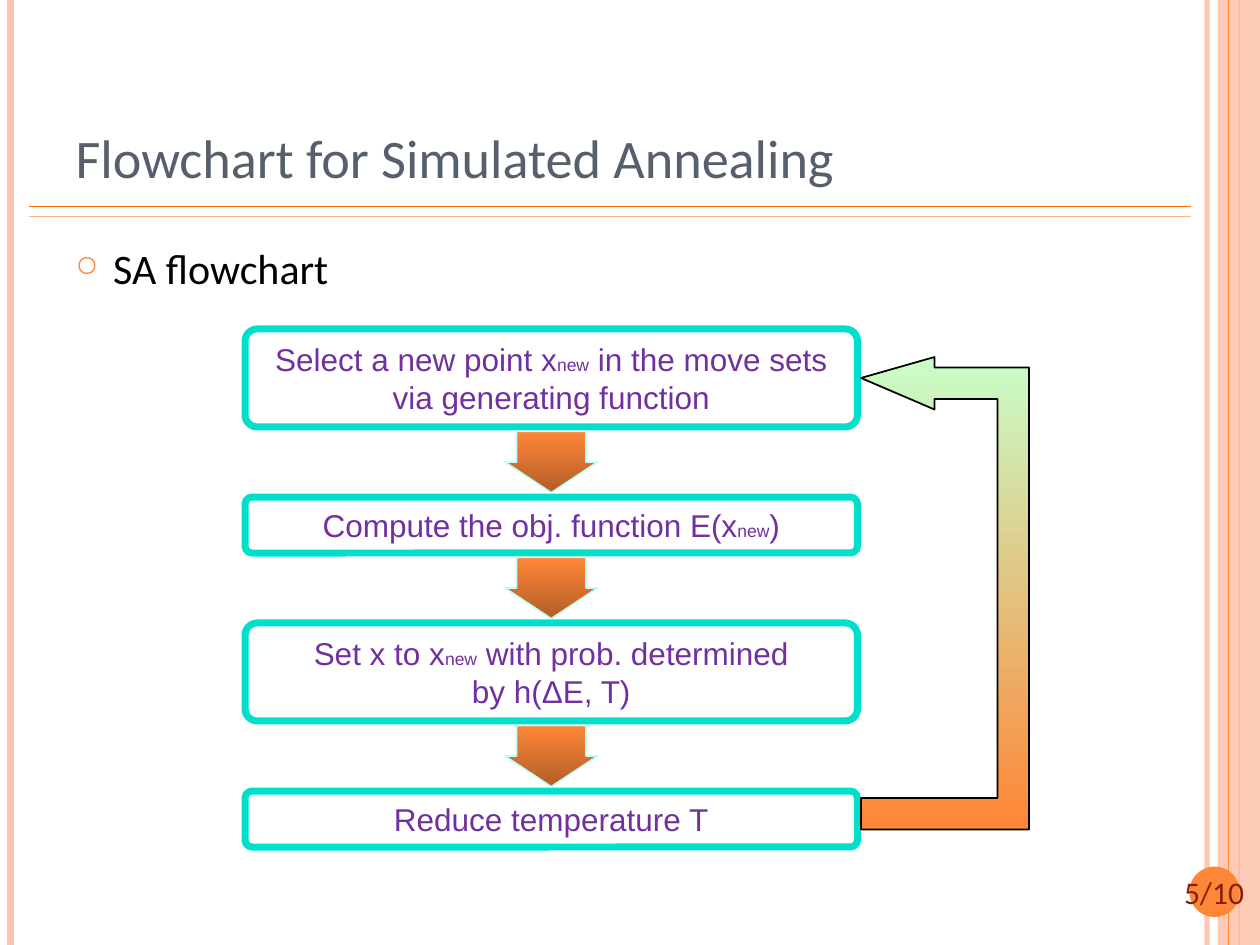
import pptx
import pptx.dml.color
import pptx.enum.shapes
import pptx.enum.text
import pptx.util
from lxml import etree
from pptx.oxml.ns import qn

Pt = pptx.util.Pt
SHAPE = pptx.enum.shapes.MSO_SHAPE
ALIGN = pptx.enum.text.PP_ALIGN
ANCHOR = pptx.enum.text.MSO_ANCHOR

# Content
TITLE = "Flowchart for Simulated Annealing"
TOPIC = "SA flowchart"
PAGE = "5/10"
NEW = ("new", 10)
# Each step: top, height, lines of (wording, size) runs
STEPS = [
    (188, 56, [[("Select a new point x", 18), NEW, (" in the move sets", 18)],
               [("via generating function", 18)]]),
    (284, 32, [[("Compute the obj. function E(x", 18), NEW, (")", 18)]]),
    (356, 56, [[("Set x to x", 18), NEW, (" with prob. determined", 18)],
               [("by h(ΔE, T)", 18)]]),
    (452, 32, [[("Reduce temperature T", 18)]]),
]
STEP_LEFT, STEP_WIDTH = 140, 350
ARROW_WIDTH, ARROW_HEIGHT = 53, 35
LOOP = [(492, 474), (588, 474), (588, 210), (534, 210), (534, 204), (492, 216),
        (534, 234), (534, 228), (570, 228), (570, 456), (492, 456)]
# Decoration: x, colour, width, opacity; and y, colour
RAILS_BEHIND = [(689.8, "FEC3AE", 3, 93), (6, "FEC3AE", 4.5, 100), (708, "FE8637", 1.5, 100)]
RAIL_FRONT = (702, "FE8637", 0.75, 100)
RULES = [(118, "FF6B0A"), (123.8, "FEB687")]

deck = pptx.Presentation()
deck.slide_width, deck.slide_height = Pt(720), Pt(540)
slide = deck.slides.add_slide(deck.slide_layouts[5])
shapes = slide.shapes


def rgb(code):
    return pptx.dml.color.RGBColor.from_string(code)


def set_all(target, values):
    for key, value in values.items():
        setattr(target, key, value)


def set_opacity(part, percent):
    if percent < 100:
        color = next(part._element.spPr.iter(qn("a:srgbClr")))
        etree.SubElement(color, qn("a:alpha"), val=str(percent * 1000))


def add_line(start, end, color, width, opacity=100):
    line = shapes.add_connector(pptx.enum.shapes.MSO_CONNECTOR.STRAIGHT, *map(Pt, start + end))
    line.line.color.rgb = rgb(color)
    line.line.width = Pt(width)
    set_opacity(line, opacity)
    etree.SubElement(line._element.spPr, qn("a:effectLst"))


def add_rail(x, color, width, opacity):
    add_line((x, 0), (x, 540), color, width, opacity)


def paint(part, fill=None, line=None, width=1):
    """Fill is a colour, a pair of colours from top to bottom, or nothing."""
    part.shadow.inherit = False
    if fill is None:
        part.fill.background()
    elif isinstance(fill, str):
        part.fill.solid()
        part.fill.fore_color.rgb = rgb(fill)
    else:
        part.fill.gradient()
        part.fill.gradient_angle = 270
        for stop, color in zip(part.fill.gradient_stops, fill):
            stop.color.rgb = rgb(color)
    if line:
        part.line.color.rgb = rgb(line)
        part.line.width = Pt(width)
    else:
        part.line.fill.background()


def add_preset(preset, box, **look):
    part = shapes.add_shape(preset, *map(Pt, box))
    paint(part, **look)
    return part


def write(frame, lines, font, color, align, anchor, wrap=True):
    set_all(frame, {"word_wrap": wrap, "vertical_anchor": anchor,
                    "margin_left": Pt(7.2), "margin_right": Pt(7.2),
                    "margin_top": Pt(3.6), "margin_bottom": Pt(3.6)})
    for index, line in enumerate(lines):
        paragraph = frame.add_paragraph() if index else frame.paragraphs[0]
        paragraph.alignment = align
        for wording, size in line:
            run = paragraph.add_run()
            run.text = wording
            set_all(run.font, {"name": font, "size": Pt(size)})
            run.font.color.rgb = rgb(color)


# Side rails, title rules and page badge
for rail in RAILS_BEHIND:
    add_rail(*rail)
band = add_preset(SHAPE.RECTANGLE, (696, 0, 24, 540), fill="FEC3AE")
set_opacity(band, 87)
add_rail(*RAIL_FRONT)
for y, color in RULES:
    add_line((16.8, y), (680.4, y), color, 1)
add_preset(SHAPE.OVAL, (679.7, 495.2, 28.8, 28.8), fill="FE8637")
page = shapes.add_textbox(Pt(661), Pt(495.2), Pt(65.5), Pt(29))
write(page.text_frame, [[(PAGE, 18)]], "Calibri", "862110", ALIGN.CENTER, ANCHOR.TOP)

# Title and topic
title = shapes.title
set_all(title, {"left": Pt(36), "top": Pt(21.6), "width": Pt(588), "height": Pt(90)})
write(title.text_frame, [[(TITLE, 31)]], "Calibri", "575F6D", ALIGN.LEFT, ANCHOR.BOTTOM)

topic = shapes.add_textbox(Pt(36), Pt(135), Pt(588), Pt(375))
write(topic.text_frame, [[(TOPIC, 24)]], "Calibri", "000000", ALIGN.LEFT, ANCHOR.TOP)
bullet = topic.text_frame.paragraphs[0]._p.get_or_add_pPr()
bullet.set("marL", str(Pt(21.6)))
bullet.set("indent", str(-Pt(21.6)))
bullet_color = etree.SubElement(bullet, qn("a:buClr"))
etree.SubElement(bullet_color, qn("a:srgbClr"), val="FE8637")
etree.SubElement(bullet, qn("a:buSzPct"), val="70000")
etree.SubElement(bullet, qn("a:buChar"), char="○")

# Steps
for top, height, lines in STEPS:
    step = add_preset(SHAPE.ROUNDED_RECTANGLE, (STEP_LEFT, top, STEP_WIDTH, height),
                      line="00DFCA", width=4)
    step.adjustments[0] = 0.125
    write(step.text_frame, lines, "Arial", "7030A0", ALIGN.CENTER, ANCHOR.MIDDLE, wrap=False)

# Down arrows, centred in the gaps between steps
for (top, height, _), (next_top, _, _) in zip(STEPS, STEPS[1:]):
    middle = (top + height + next_top) / 2
    arrow = add_preset(SHAPE.DOWN_ARROW,
                       (STEP_LEFT + (STEP_WIDTH - ARROW_WIDTH) / 2, middle - ARROW_HEIGHT / 2,
                        ARROW_WIDTH, ARROW_HEIGHT),
                       fill=("FE8637", "B35E27"), line="C0FEF9")
    arrow.adjustments[0], arrow.adjustments[1] = 0.75, 0.5

# Loop back to the first step
outline = shapes.build_freeform(*map(Pt, LOOP[0]))
outline.add_line_segments([(Pt(x), Pt(y)) for x, y in LOOP[1:]], close=True)
paint(outline.convert_to_shape(), fill=("C8FEC8", "FE8637"), line="000000")

deck.save("out.pptx")
